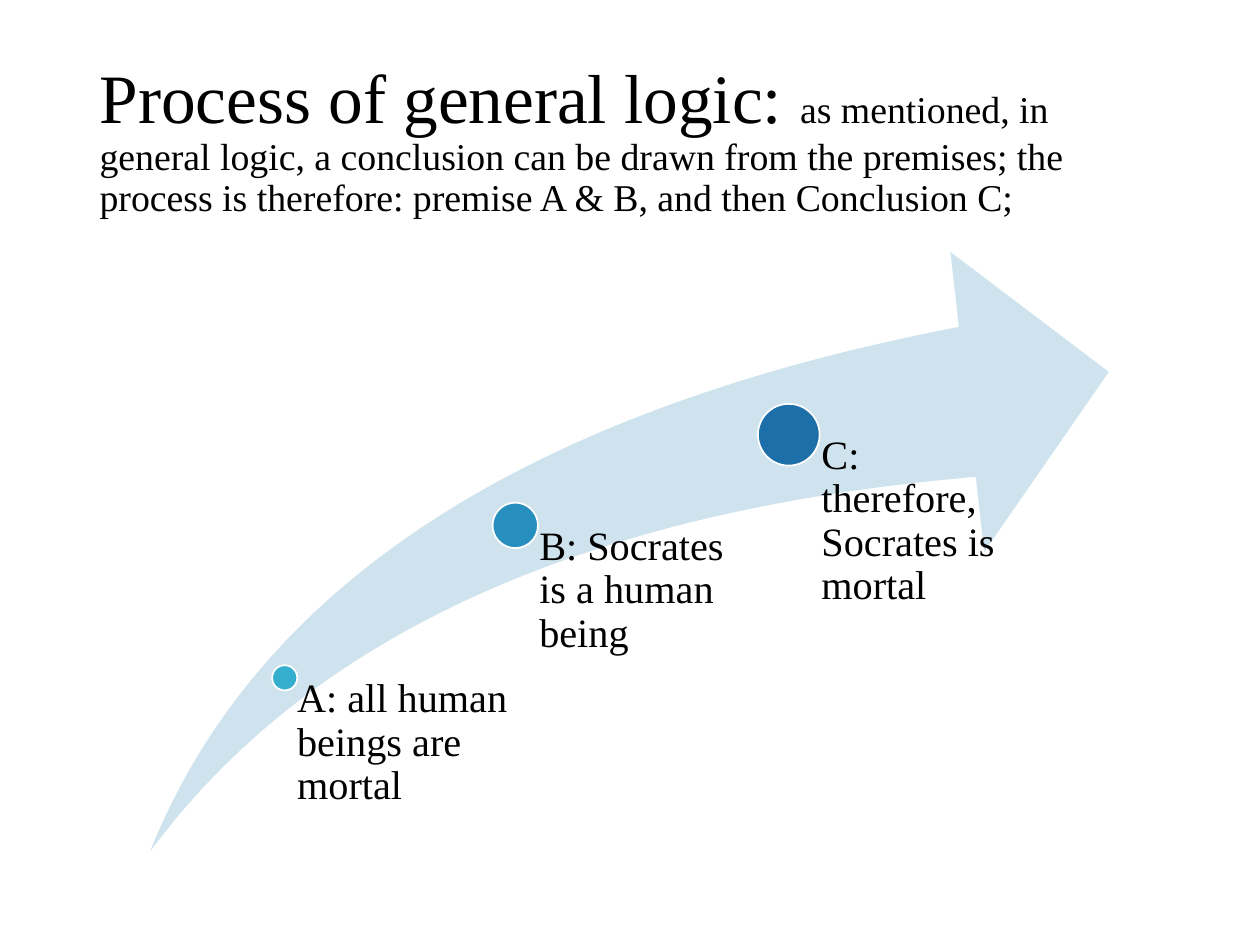
from pptx import Presentation
from pptx import util as u
from pptx.dml.color import RGBColor
from pptx.enum import shapes, text

FONT = "Times New Roman"
BLACK = RGBColor(0x00, 0x00, 0x00)
WHITE = RGBColor(0xFF, 0xFF, 0xFF)
PALE_BLUE = RGBColor(0xCE, 0xE3, 0xED)

WIDTH, HEIGHT = u.Inches(10), u.Inches(7.5)
COLUMNS, ROWS = 100, 75
ARROW = (11.9, 20, 76.1, 47.6)  # left, top, width, height in grid cells
ARROW_BOTTOM = ARROW[1] + ARROW[3]

TITLE = (
    ("Process of general logic: ", 39.6),
    ("as mentioned, in general logic, a conclusion can be drawn from the premises; "
     "the process is therefore: premise A & B, and then Conclusion C;", 21.6),
)
# wording, centre column, centre row, dot diameter, text width, text indent, colour
STEPS = (
    ("A: all human beings are mortal", 22.6, 53.8, 2, 17.7, 1,
     RGBColor(0x36, 0xAF, 0xCE)),
    ("B: Socrates is a human being", 40.9, 41.7, 3.6, 18.3, 1.9,
     RGBColor(0x27, 0x8F, 0xBE)),
    ("C: therefore, Socrates is mortal", 62.6, 34.5, 4.9, 18.3, 2.6,
     RGBColor(0x1D, 0x6F, 0xA9)),
)


def across(columns):
    return round(WIDTH * columns / COLUMNS)


def down(rows):
    return round(HEIGHT * rows / ROWS)


def area(left, top, width, height):
    return across(left), down(top), across(width), down(height)


def style_span(span, size):
    span.font.name = FONT
    span.font.size = u.Pt(size)
    span.font.color.rgb = BLACK


def add_title(page):
    title = page.shapes.title
    title.left, title.top, title.width, title.height = area(6.9, 4, 86.2, 14.5)
    frame = title.text_frame
    frame.auto_size = text.MSO_AUTO_SIZE.NONE
    frame.vertical_anchor = text.MSO_ANCHOR.MIDDLE
    para = frame.paragraphs[0]
    para.alignment = text.PP_ALIGN.LEFT
    para.line_spacing = 0.9
    for wording, size in TITLE:
        span = para.add_run()
        span.text = wording
        style_span(span, size)


def add_filled(group, kind, place, color):
    shape = group.shapes.add_shape(kind, *area(*place))
    shape.shadow.inherit = False
    shape.fill.solid()
    shape.fill.fore_color.rgb = color
    shape.line.fill.background()
    return shape


def add_arrow(group):
    arrow = add_filled(group, shapes.MSO_SHAPE.SWOOSH_ARROW, ARROW, PALE_BLUE)
    arrow.adjustments[0] = 0.25
    arrow.adjustments[1] = 0.25


def add_dot(group, column, row, diameter, color):
    place = (column - diameter / 2, row - diameter / 2, diameter, diameter)
    dot = add_filled(group, shapes.MSO_SHAPE.OVAL, place, color)
    dot.line.color.rgb = WHITE
    dot.line.width = u.Pt(1)


def add_label(group, wording, column, row, width, indent):
    """Text from the centre of a dot down to the foot of the arrow."""
    box = group.shapes.add_textbox(*area(column, row, width, ARROW_BOTTOM - row))
    frame = box.text_frame
    frame.word_wrap = True
    frame.margin_left = across(indent)
    frame.margin_top = frame.margin_right = frame.margin_bottom = 0
    frame.text = wording
    para = frame.paragraphs[0]
    para.alignment = text.PP_ALIGN.LEFT
    para.line_spacing = 0.9
    style_span(para.runs[0], 23)


def main():
    deck = Presentation()
    deck.slide_width, deck.slide_height = WIDTH, HEIGHT
    page = deck.slides.add_slide(deck.slide_layouts.get_by_name("Title Only"))
    add_title(page)
    diagram = page.shapes.add_group_shape()
    add_arrow(diagram)
    for wording, column, row, diameter, width, indent, color in STEPS:
        add_dot(diagram, column, row, diameter, color)
        add_label(diagram, wording, column, row, width, indent)
    deck.save("out.pptx")


if __name__ == "__main__":
    main()
